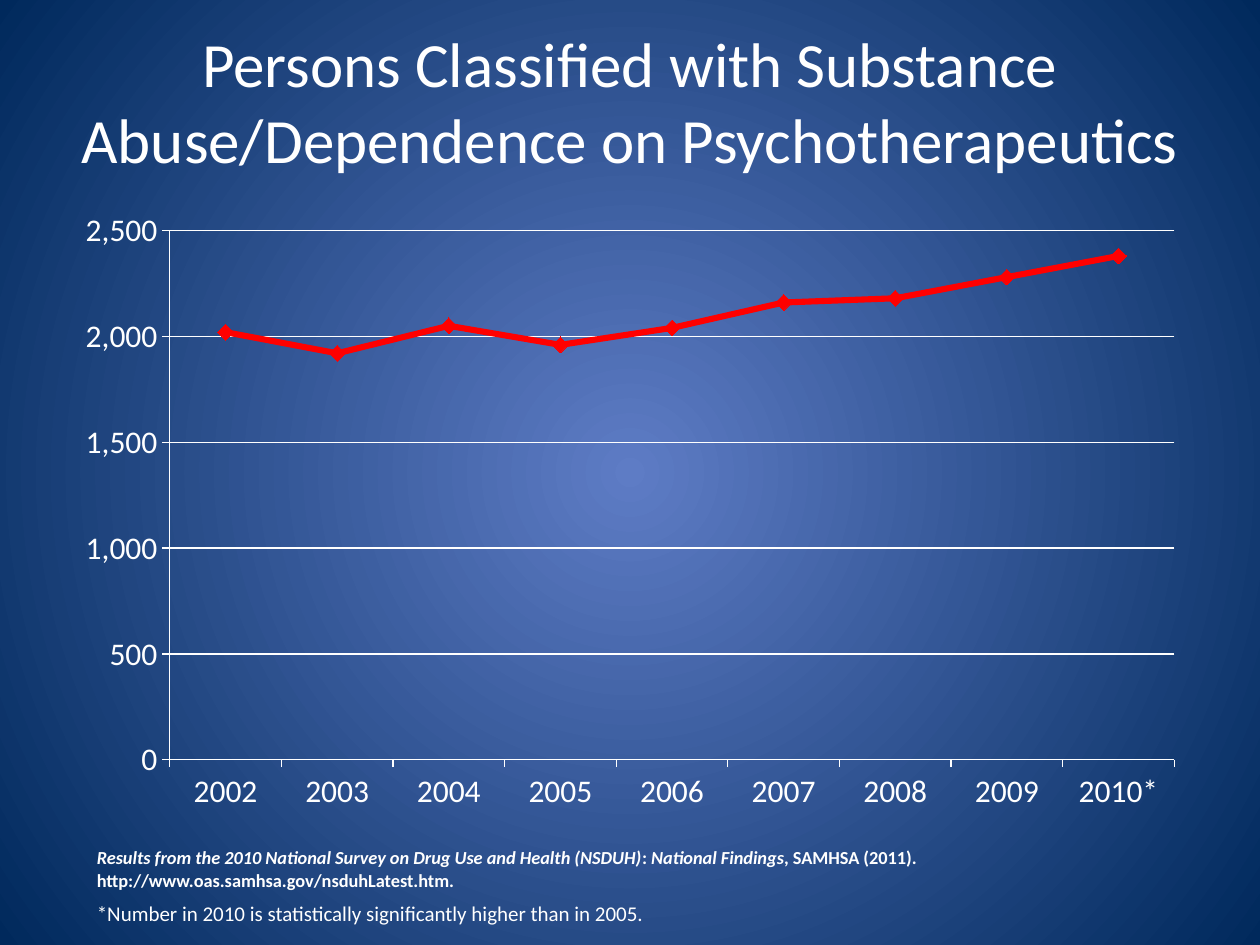
from dataclasses import dataclass

from lxml import etree
from pptx import Presentation
from pptx.chart import data
from pptx.dml.color import RGBColor
from pptx.enum import chart as ch, text
from pptx.oxml import ns
from pptx.util import Inches, Pt

WHITE = RGBColor(0xFF, 0xFF, 0xFF)
RED = RGBColor(0xFF, 0x00, 0x00)
GLOW = RGBColor(0x5E, 0x7C, 0xC5)
NAVY = RGBColor(0x00, 0x29, 0x5C)
FONT = "Calibri"

PERSONS_BY_YEAR = {
    "2002": 2020, "2003": 1920, "2004": 2050, "2005": 1960, "2006": 2040,
    "2007": 2160, "2008": 2180, "2009": 2280, "2010*": 2380,
}


@dataclass
class Box:
    left: float
    top: float
    width: float
    height: float

    def lengths(self):
        return [Inches(v) for v in (self.left, self.top, self.width, self.height)]


@dataclass
class Run:
    text: str
    italic: bool = False


def set_radial_background(s, inner: RGBColor, outer: RGBColor) -> None:
    fill = s.background.fill
    fill.gradient()
    for stop, color in zip(fill.gradient_stops, (inner, outer)):
        stop.color.rgb = color
    grad = s._element.find(".//" + ns.qn("a:gradFill"))
    lin = grad.find(ns.qn("a:lin"))
    circle = etree.Element(ns.qn("a:path"), {"path": "circle"})
    center = {side: "50000" for side in "ltrb"}
    etree.SubElement(circle, ns.qn("a:fillToRect"), center)
    grad.replace(lin, circle)


def add_text(s, box: Box, paragraphs: list[list[Run]], *, size: float,
             bold: bool = False, wrap: bool = False,
             align=text.PP_ALIGN.LEFT, anchor=text.MSO_ANCHOR.TOP) -> None:
    tf = s.shapes.add_textbox(*box.lengths()).text_frame
    tf.word_wrap = wrap
    tf.auto_size = (text.MSO_AUTO_SIZE.NONE if wrap
                    else text.MSO_AUTO_SIZE.SHAPE_TO_FIT_TEXT)
    tf.vertical_anchor = anchor
    for i, runs in enumerate(paragraphs):
        p = tf.add_paragraph() if i else tf.paragraphs[0]
        p.alignment = align
        for run in runs:
            r = p.add_run()
            r.text = run.text
            r.font.name, r.font.size = FONT, Pt(size)
            r.font.bold, r.font.italic = bold, run.italic
            r.font.color.rgb = WHITE


def style_line(line, color: RGBColor, width: float) -> None:
    line.color.rgb = color
    line.width = Pt(width)


def add_trend_chart(s, box: Box, values: dict[str, int]) -> None:
    cd = data.CategoryChartData(number_format="#,##0")
    cd.categories = list(values)
    cd.add_series("Series 1", list(values.values()))
    chart = s.shapes.add_chart(
        ch.XL_CHART_TYPE.LINE_MARKERS, *box.lengths(), cd).chart
    chart.has_legend = chart.has_title = False
    chart.font.name, chart.font.size = FONT, Pt(18)
    chart.font.color.rgb = WHITE

    for axis in (chart.category_axis, chart.value_axis):
        axis.major_tick_mark = ch.XL_TICK_MARK.OUTSIDE
        axis.minor_tick_mark = ch.XL_TICK_MARK.NONE
        style_line(axis.format.line, WHITE, 0.75)
    axis = chart.value_axis
    axis.minimum_scale, axis.maximum_scale, axis.major_unit = 0, 2500, 500
    axis.tick_labels.number_format = "#,##0"
    axis.tick_labels.number_format_is_linked = False
    axis.has_major_gridlines = True
    style_line(axis.major_gridlines.format.line, WHITE, 0.75)

    plot = chart.plots[0]
    plot.vary_by_categories = False
    series = plot.series[0]
    series.smooth = False
    style_line(series.format.line, RED, 3.5)
    marker = series.marker
    marker.style, marker.size = ch.XL_MARKER_STYLE.DIAMOND, 9
    marker.format.fill.solid()
    marker.format.fill.fore_color.rgb = RED
    marker.format.line.color.rgb = RED


def main() -> None:
    prs = Presentation()
    prs.slide_width, prs.slide_height = Inches(10), Inches(7.5)
    s = prs.slides.add_slide(prs.slide_layouts[6])
    set_radial_background(s, GLOW, NAVY)

    add_text(s, Box(0.5, 0.17, 9, 1.25),
             [[Run("Persons Classified with Substance "
                   "Abuse/Dependence on Psychotherapeutics")]],
             size=36, wrap=True, align=text.PP_ALIGN.CENTER,
             anchor=text.MSO_ANCHOR.MIDDLE)
    add_trend_chart(s, Box(0.5, 1.58, 9, 4.95), PERSONS_BY_YEAR)
    add_text(s, Box(0.67, 6.67, 6.85, 0.45),
             [[Run("Results from the 2010 National Survey on Drug Use "
                   "and Health (NSDUH)", italic=True),
               Run(": "),
               Run("National Findings", italic=True),
               Run(", SAMHSA (2011).")],
              [Run("http://www.oas.samhsa.gov/nsduhLatest.htm.")]],
             size=10.5, bold=True)
    add_text(s, Box(0.67, 7.1, 4.59, 0.3),
             [[Run("*Number in 2010 is statistically significantly "
                   "higher than in 2005.")]], size=12)
    prs.save("out.pptx")


if __name__ == "__main__":
    main()
